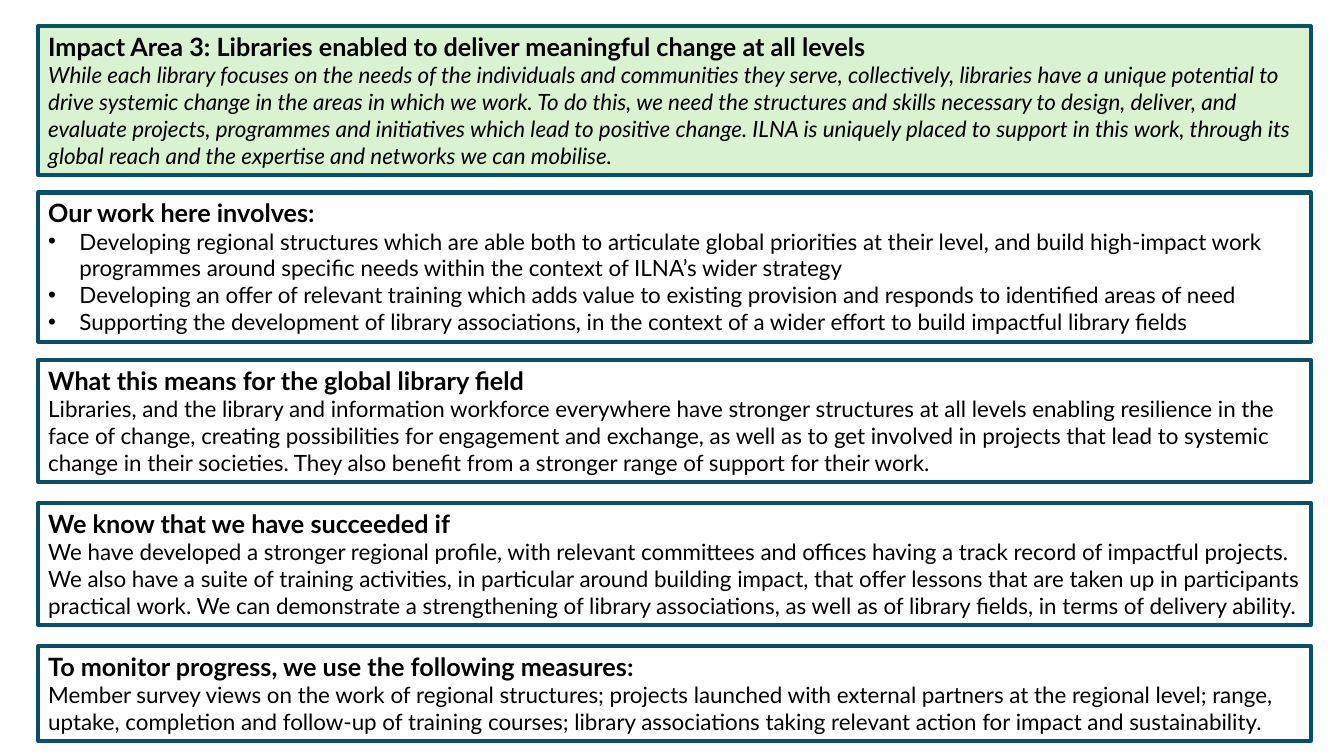
"""Build a slide of five stacked panels on one impact area."""
from pptx import Presentation, util as u
from pptx.dml.color import RGBColor
from pptx.enum import shapes, text
from pptx.oxml.xmlchemy import OxmlElement

PX = 9144
LEFT, WIDE = 38, 1262
BASE, ROW = 40, 27
INDENT = 31
EDGE, INK, MINT, WHITE = "084F6A", "000000", "D9F2D0", "FFFFFF"

PANELS = [
    dict(top=26, rows=4, fill=MINT, italic=True,
         head="Impact Area 3: Libraries enabled to deliver meaningful change at all levels",
         body=["While each library focuses on the needs of the individuals and communities they serve, "
               "collectively, libraries have a unique potential to drive systemic change in the areas in "
               "which we work. To do this, we need the structures and skills necessary to design, deliver, "
               "and evaluate projects, programmes and initiatives which lead to positive change. ILNA is "
               "uniquely placed to support in this work, through its global reach and the expertise and "
               "networks we can mobilise."]),
    dict(top=191, rows=4, bullet=True,
         head="Our work here involves:",
         body=["Developing regional structures which are able both to articulate global priorities at "
               "their level, and build high-impact work programmes around specific needs within the "
               "context of ILNA’s wider strategy",
               "Developing an offer of relevant training which adds value to existing provision and "
               "responds to identified areas of need",
               "Supporting the development of library associations, in the context of a wider effort to "
               "build impactful library fields"]),
    dict(top=357, rows=3,
         head="What this means for the global library field",
         body=["Libraries, and the library and information workforce everywhere have stronger structures "
               "at all levels enabling resilience in the face of change, creating possibilities for "
               "engagement and exchange, as well as to get involved in projects that lead to systemic "
               "change in their societies. They also benefit from a stronger range of support for their "
               "work."]),
    dict(top=499, rows=3,
         head="We know that we have succeeded if",
         body=["We have developed a stronger regional profile, with relevant committees and offices "
               "having a track record of impactful projects. We also have a suite of training activities, "
               "in particular around building impact, that offer lessons that are taken up in "
               "participants practical work. We can demonstrate a strengthening of library associations, "
               "as well as of library fields, in terms of delivery ability."]),
    dict(top=641, rows=2,
         head="To monitor progress, we use the following measures:",
         body=["Member survey views on the work of regional structures; projects launched with external "
               "partners at the regional level; range, uptake, completion and follow-up of training "
               "courses; library associations taking relevant action for impact and sustainability."]),
]


def color(code):
    """Turn a hex string into a colour."""
    return RGBColor.from_string(code)


def write(para, words, size=16, bold=False, italic=False, bullet=False):
    """Put formatted text into a paragraph."""
    para.alignment = text.PP_ALIGN.LEFT
    run = para.add_run()
    run.text = words
    font = run.font
    font.name, font.size, font.bold, font.italic = "Lato", u.Pt(size), bold, italic
    font.color.rgb = color(INK)
    if bullet:
        props = para._p.get_or_add_pPr()
        props.set("marL", str(INDENT * PX))
        props.set("indent", str(-INDENT * PX))
        face = OxmlElement("a:buFont")
        face.set("typeface", "Arial")
        mark = OxmlElement("a:buChar")
        mark.set("char", "•")
        props.extend([face, mark])


def panel(slide, top, rows, head, body, fill=WHITE, italic=False, bullet=False):
    """Draw a framed panel whose height follows its rows."""
    area = [n * PX for n in (LEFT, top, WIDE, BASE + rows * ROW)]
    box = slide.shapes.add_shape(shapes.MSO_SHAPE.RECTANGLE, *area)
    box.shadow.inherit = False
    box.fill.solid()
    box.fill.fore_color.rgb = color(fill)
    box.line.color.rgb = color(EDGE)
    box.line.width = u.Pt(3)
    frame = box.text_frame
    frame.word_wrap = True
    frame.auto_size = text.MSO_AUTO_SIZE.SHAPE_TO_FIT_TEXT
    frame.vertical_anchor = text.MSO_ANCHOR.TOP
    write(frame.paragraphs[0], head, size=18, bold=True)
    for words in body:
        write(frame.add_paragraph(), words, italic=italic, bullet=bullet)


def main():
    """Make the deck and save it."""
    deck = Presentation()
    deck.slide_width, deck.slide_height = 1333 * PX, 750 * PX
    slide = deck.slides.add_slide(deck.slide_layouts[6])
    for item in PANELS:
        panel(slide, **item)
    deck.save("out.pptx")


if __name__ == "__main__":
    main()
